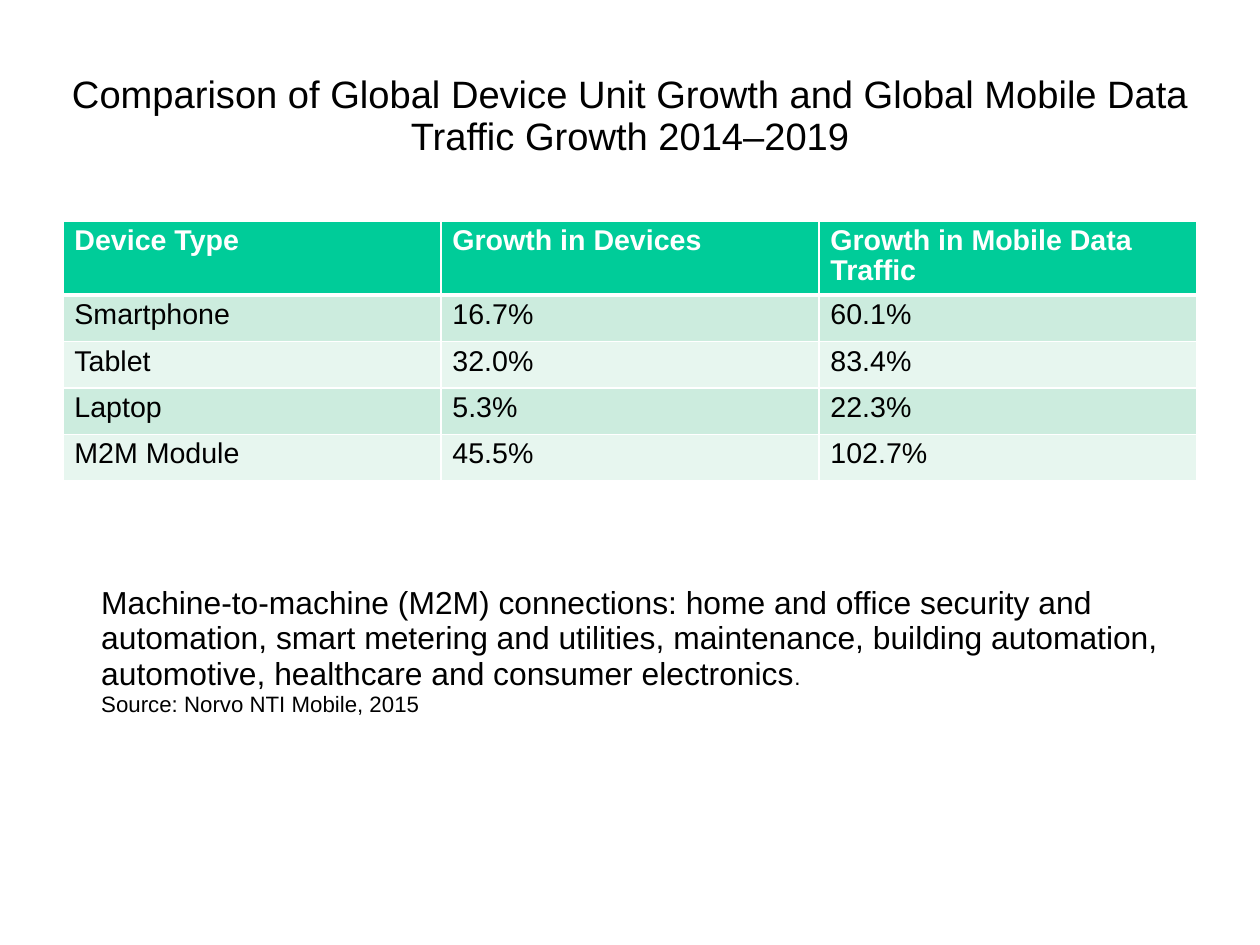
from lxml.etree import SubElement
from pptx import Presentation
from pptx.dml.color import RGBColor
from pptx.enum.text import MSO_ANCHOR as Anchor, MSO_AUTO_SIZE as AutoSize, PP_ALIGN as Align
from pptx.oxml.ns import qn
from pptx.util import Cm, Pt

BLACK = RGBColor(0x00, 0x00, 0x00)
WHITE = RGBColor(0xFF, 0xFF, 0xFF)
GREEN = RGBColor(0x00, 0xCC, 0x99)
BANDS = (RGBColor(0xE7, 0xF6, 0xEF), RGBColor(0xCC, 0xEC, 0xDE))

TITLE = "Comparison of Global Device Unit Growth and Global Mobile Data Traffic Growth 2014–2019"
GROWTH = [
    ("Device Type", "Growth in Devices", "Growth in Mobile Data Traffic"),
    ("Smartphone", "16.7%", "60.1%"),
    ("Tablet", "32.0%", "83.4%"),
    ("Laptop", "5.3%", "22.3%"),
    ("M2M Module", "45.5%", "102.7%"),
]
# Each line is a list of (text, size) runs
NOTE = [
    [("Machine-to-machine (M2M) connections: home and office security and", 20)],
    [("automation, smart metering and utilities, maintenance, building automation,", 20)],
    [("automotive, healthcare and consumer electronics", 20), (".", 14)],
    [("Source: Norvo NTI Mobile, 2015", 14)],
]


class SlideBuilder:
    font_name = "Arial"
    line_spacing = 0.93

    def __init__(self, slide):
        self.slide = slide

    def add_runs(self, paragraph, runs, color=BLACK, bold=False, align=Align.LEFT):
        paragraph.alignment = align
        paragraph.line_spacing = self.line_spacing
        paragraph.space_before = paragraph.space_after = Pt(0)
        for text, size in runs:
            run = paragraph.add_run()
            run.text = text
            run.font.name = self.font_name
            run.font.size = Pt(size)
            run.font.bold = bold
            run.font.color.rgb = color

    def title(self, text, left, top, width, height):
        shape = self.slide.shapes.title
        shape.left, shape.top, shape.width, shape.height = left, top, width, height
        frame = shape.text_frame
        frame.margin_left = frame.margin_right = frame.margin_top = frame.margin_bottom = 0
        frame.vertical_anchor = Anchor.MIDDLE
        frame.auto_size = AutoSize.NONE
        frame.word_wrap = True
        self.add_runs(frame.paragraphs[0], [(text, 24)], align=Align.CENTER)

    def borders(self, cell, top, bottom):
        properties = cell._tc.get_or_add_tcPr()
        for side, width in (("L", 1), ("R", 1), ("T", top), ("B", bottom)):
            line = SubElement(properties, qn(f"a:ln{side}"), w=str(Pt(width)))
            fill = SubElement(line, qn("a:solidFill"))
            SubElement(fill, qn("a:srgbClr"), val=str(WHITE))

    def table(self, rows, left, top, width, header_height, row_height):
        height = header_height + row_height * (len(rows) - 1)
        table = self.slide.shapes.add_table(
            len(rows), len(rows[0]), left, top, width, height).table
        for row_index, values in enumerate(rows):
            header = row_index == 0
            table.rows[row_index].height = header_height if header else row_height
            for column_index, value in enumerate(values):
                cell = table.cell(row_index, column_index)
                # The thick rule lies between the header and the first data row
                self.borders(cell, top=3 if row_index == 1 else 1, bottom=3 if header else 1)
                cell.fill.solid()
                cell.fill.fore_color.rgb = GREEN if header else BANDS[row_index % 2]
                self.add_runs(cell.text_frame.paragraphs[0], [(value, 18)],
                              color=WHITE if header else BLACK, bold=header)

    def text_box(self, lines, left, top, width, height):
        frame = self.slide.shapes.add_textbox(left, top, width, height).text_frame
        frame.word_wrap = False
        frame.auto_size = AutoSize.SHAPE_TO_FIT_TEXT
        for index, runs in enumerate(lines):
            paragraph = frame.add_paragraph() if index else frame.paragraphs[0]
            self.add_runs(paragraph, runs)


def main():
    presentation = Presentation()
    presentation.slide_width, presentation.slide_height = Cm(28), Cm(21)
    title_only = presentation.slide_layouts[5]
    builder = SlideBuilder(presentation.slides.add_slide(title_only))

    # Title
    builder.title(TITLE, Cm(1.4), Cm(0.84), Cm(25.2), Cm(3.5))
    # Growth table
    builder.table(GROWTH, Cm(1.4), Cm(4.91), Cm(25.2), Cm(1.65), Cm(1.03))
    # Explanation and source
    builder.text_box(NOTE, Cm(2), Cm(12.9), Cm(24.36), Cm(3.2))

    presentation.save("out.pptx")


if __name__ == "__main__":
    main()
